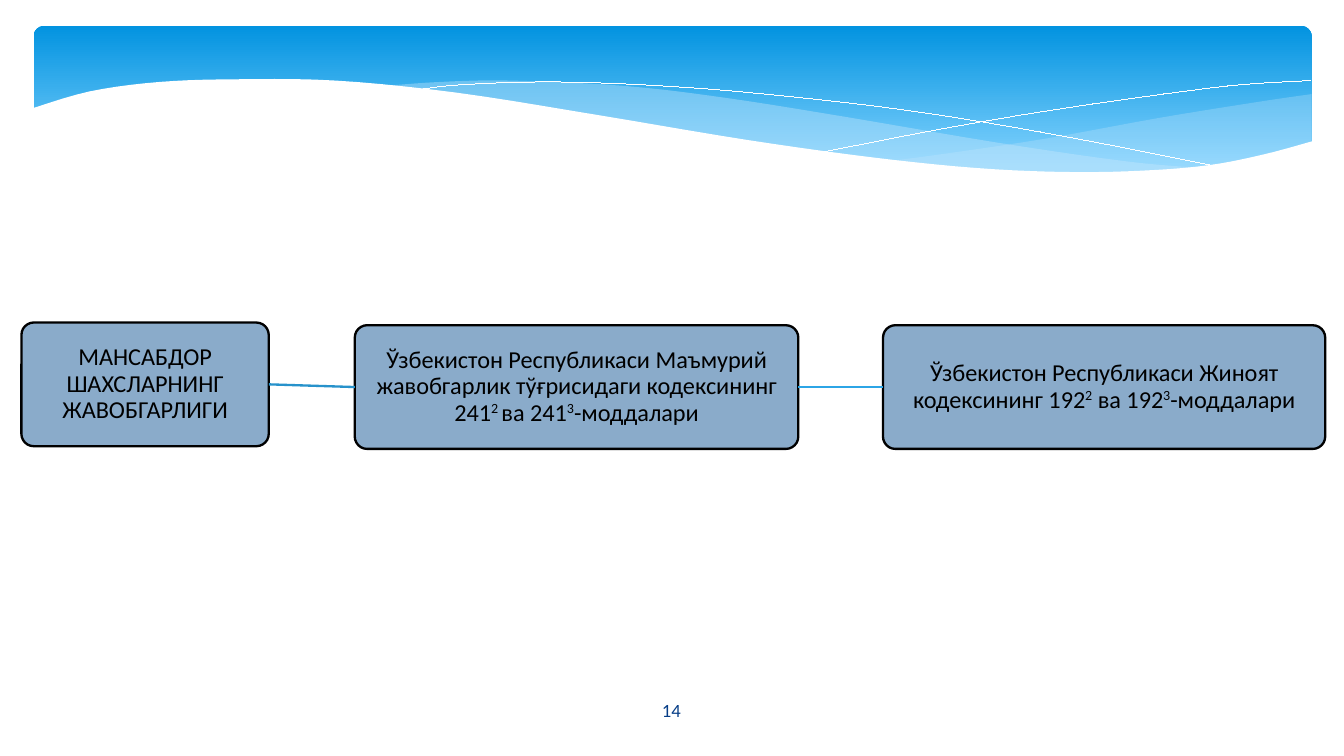
from dataclasses import dataclass

from lxml import etree
from pptx import Presentation
from pptx import util as u
from pptx.dml.color import RGBColor
from pptx.enum import shapes, text
from pptx.oxml.ns import qn

COLORS = {
    "sky_top": "0293E0", "sky_bottom": "83D3FE", "mist": "C6E7FC", "white": "FFFFFF",
    "step": "8AABCA", "black": "000000", "link_dark": "2792CB", "link": "2CA5E6",
    "number": "073E87",
}
Point = tuple[float, float]


@dataclass(frozen=True)
class Wave:
    curves: tuple[tuple[Point, ...], ...]
    fill: str | None = None
    opacity: int = 100


@dataclass(frozen=True)
class Step:
    left: float
    top: float
    width: float
    label: str


WAVES = (
    Wave((((9.76, 0.7), (9.35, 0.76), (8.61, 0.88), (7.79, 1.03), (7.06, 1.14), (6.61, 1.2)),
          ((6.61, 1.2), (7.19, 1.25), (7.69, 1.28), (8.24, 1.29), (8.81, 1.26), (9.28, 1.18),
           (9.76, 1.06))), "mist", 29),
    Wave((((8.93, 1.25), (8.37, 1.2), (7.41, 1.06), (6.29, 0.87), (5.41, 0.73), (4.65, 0.64),
           (3.8, 0.6), (3.28, 0.61), (2.86, 0.64)),
          ((2.86, 0.64), (3.62, 0.73), (4.49, 0.87), (5.66, 1.07), (6.5, 1.19), (7.22, 1.26),
           (8.07, 1.3), (8.57, 1.28), (8.93, 1.25))), "mist", 40),
    Wave((((3.09, 0.67), (3.44, 0.63), (4.16, 0.61), (5.1, 0.65), (6.08, 0.74), (6.95, 0.85),
           (7.95, 1.02), (9.07, 1.24)),)),
    Wave((((6.13, 1.13), (6.95, 0.97), (7.76, 0.83), (8.66, 0.7), (9.24, 0.63), (9.75, 0.6)),)),
    Wave((((9.77, 1.05), (9.4, 1.15), (8.99, 1.23), (8.5, 1.27), (7.93, 1.28), (7.26, 1.25),
           (6.48, 1.17), (5.55, 1.04), (4.47, 0.86), (3.4, 0.69), (2.5, 0.6), (1.77, 0.59),
           (1.19, 0.61), (0.67, 0.68), (0.23, 0.81)),
          ((0.23, 1.68), (9.77, 1.68))), "white"),
)
STEPS = (
    Step(0.16, 2.4, 1.84, "МАНСАБДОР ШАХСЛАРНИНГ ЖАВОБГАРЛИГИ"),
    Step(2.64, 2.42, 3.3, "Ўзбекистон Республикаси Маъмурий жавобгарлик тўғрисидаги "
                          "кодексининг 241^2 ^ва 241^3^-моддалари"),
    Step(6.57, 2.42, 3.29, "Ўзбекистон Республикаси Жиноят кодексининг 192^2^ ва 192^3^-моддалари"),
)
STEP_HEIGHT = 0.92
LINK_COLORS = ("link_dark", "link")


def rgb(name: str) -> RGBColor:
    return RGBColor.from_string(COLORS[name])


def smooth(knots: tuple[Point, ...], pieces: int = 5) -> list[Point]:
    if len(knots) < 3:
        return list(knots)
    padded = (knots[0], *knots, knots[-1])
    points = [knots[0]]
    for a, b, c, d in zip(padded, padded[1:], padded[2:], padded[3:]):
        for piece in range(1, pieces + 1):
            t = piece / pieces
            x, y = (
                (2 * q + (r - p) * t + (2 * p - 5 * q + 4 * r - s) * t ** 2
                 + (3 * q - p - 3 * r + s) * t ** 3) / 2
                for p, q, r, s in zip(a, b, c, d)
            )
            points.append((x, y))
    return points


def draw_wave(slide, wave: Wave) -> None:
    points = [(u.Inches(x), u.Inches(y)) for curve in wave.curves for x, y in smooth(curve)]
    builder = slide.shapes.build_freeform(*points[0])
    builder.add_line_segments(points[1:], close=wave.fill is not None)
    ribbon = builder.convert_to_shape()
    ribbon.shadow.inherit = False
    if wave.fill is None:
        ribbon.fill.background()
        ribbon.line.color.rgb = rgb("white")
        ribbon._element.spPr.find(qn("a:ln")).set("w", "0")
        return
    ribbon.line.fill.background()
    ribbon.fill.solid()
    ribbon.fill.fore_color.rgb = rgb(wave.fill)
    if wave.opacity < 100:
        tint = ribbon._element.spPr.find(qn("a:solidFill"))[0]
        etree.SubElement(tint, qn("a:alpha"), val=str(wave.opacity * 1000))


def write(frame, content: str, *, size: float, color: str, spacing: float = 1.0,
          inset: float = 0.1) -> None:
    frame.word_wrap = True
    frame.vertical_anchor = text.MSO_ANCHOR.MIDDLE
    frame.margin_left = frame.margin_right = u.Inches(inset)
    frame.margin_top = frame.margin_bottom = u.Inches(min(inset, 0.05))
    paragraph = frame.paragraphs[0]
    paragraph.alignment = text.PP_ALIGN.CENTER
    paragraph.line_spacing = spacing
    for index, part in enumerate(content.split("^")):
        run = paragraph.add_run()
        run.text = part
        run.font.name = "Calibri"
        run.font.size = u.Pt(size)
        run.font.color.rgb = rgb(color)
        if index % 2:
            run.font._element.set("baseline", "30000")


def draw_sky(slide) -> None:
    sky = slide.shapes.add_shape(shapes.MSO_SHAPE.ROUNDED_RECTANGLE, u.Inches(0.25),
                                 u.Inches(0.19), u.Inches(9.51), u.Inches(1.17))
    sky.adjustments[0] = 0.07
    sky.shadow.inherit = False
    sky.line.fill.background()
    sky.fill.gradient()
    sky.fill.gradient_angle = 270
    for stop, color, position in zip(sky.fill.gradient_stops, ("sky_top", "sky_bottom"), (0, 0.9)):
        stop.color.rgb = rgb(color)
        stop.position = position


def draw_step(slide, step: Step):
    box = slide.shapes.add_shape(shapes.MSO_SHAPE.ROUNDED_RECTANGLE, u.Inches(step.left),
                                 u.Inches(step.top), u.Inches(step.width), u.Inches(STEP_HEIGHT))
    box.adjustments[0] = 0.1
    box.shadow.inherit = False
    box.fill.solid()
    box.fill.fore_color.rgb = rgb("step")
    box.line.color.rgb = rgb("black")
    box.line.width = u.Pt(1.25)
    write(box.text_frame, step.label, size=13, color="black", spacing=0.9, inset=0.01)
    return box


def draw_link(slide, before, after, color: str) -> None:
    link = slide.shapes.add_connector(shapes.MSO_CONNECTOR.STRAIGHT, 0, 0, 0, 0)
    link.begin_connect(before, 3)
    link.end_connect(after, 1)
    link.line.color.rgb = rgb(color)
    link.line.width = u.Pt(1.25)
    etree.SubElement(link._element.spPr, qn("a:effectLst"))


def main() -> None:
    deck = Presentation()
    deck.slide_width = u.Inches(10)
    deck.slide_height = deck.slide_width * 9 // 16
    slide = deck.slides.add_slide(deck.slide_layouts[6])
    draw_sky(slide)
    for wave in WAVES:
        draw_wave(slide, wave)
    boxes = [draw_step(slide, step) for step in STEPS]
    for before, after, color in zip(boxes, boxes[1:], LINK_COLORS):
        draw_link(slide, before, after, color)
    number = slide.shapes.add_textbox(u.Inches(4.36), u.Inches(5.13), u.Inches(1.27), u.Inches(0.3))
    write(number.text_frame, "14", size=10, color="number")
    deck.save("out.pptx")


if __name__ == "__main__":
    main()
